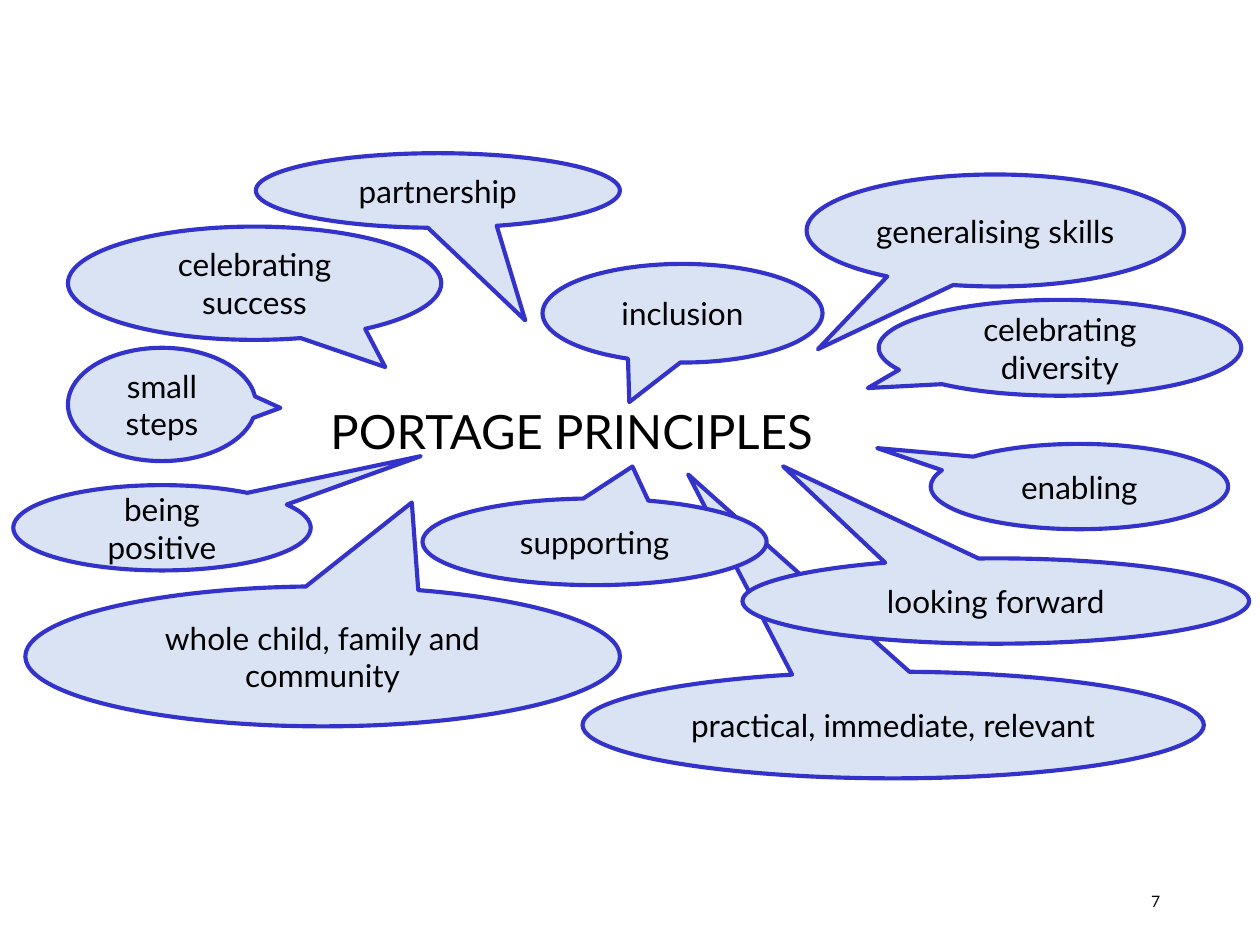
from dataclasses import dataclass

from pptx import Presentation
from pptx.dml.color import RGBColor
from pptx.enum.shapes import MSO_SHAPE
from pptx.enum.text import MSO_ANCHOR, PP_ALIGN
from pptx.slide import Slide
from pptx.text.text import TextFrame
from pptx.util import Pt

BLACK = RGBColor(0x00, 0x00, 0x00)
PALE_BLUE = RGBColor(0xDA, 0xE3, 0xF3)
BLUE = RGBColor(0x33, 0x33, 0xCC)
FONT = "Lato"


@dataclass(frozen=True)
class Callout:
    text: str
    left: float
    top: float
    width: float
    height: float
    tail_x: float
    tail_y: float


@dataclass(frozen=True)
class Label:
    text: str
    left: float
    top: float
    width: float
    height: float
    size: float
    align: PP_ALIGN
    anchor: MSO_ANCHOR


BACK_CALLOUT = Callout("practical, immediate, relevant", 314.6, 362.9, 335.5, 57.6, -0.33, -2.35)

CALLOUTS = [
    Callout("small steps", 36.7, 187.9, 101.5, 61.2, 0.63, 0.03),
    Callout("celebrating success", 36.7, 122.4, 201.6, 61.2, 0.35, 0.74),
    Callout("partnership", 138.2, 82.8, 196.6, 40.3, 0.24, 1.74),
    Callout("inclusion", 293, 142.6, 151.2, 53.3, -0.19, 0.9),
    Callout("generalising skills", 435.6, 94.3, 203.8, 60.5, -0.47, 1.06),
    Callout("celebrating diversity", 474.5, 162, 195.8, 51.8, -0.53, 0.42),
    Callout("enabling", 502.6, 239.8, 160.6, 46.1, -0.68, -0.45),
    Callout("supporting", 228.2, 269.3, 185.8, 46.8, 0.11, -0.87),
    Callout("whole child, family and community", 13.7, 316.8, 321.1, 75.6, 0.15, -1.1),
    Callout("being positive", 7.2, 262.1, 160.6, 46.1, 0.87, -0.84),
    Callout("looking forward", 401, 301.7, 273.6, 46.1, -0.42, -1.58),
]

TITLE = Label("PORTAGE PRINCIPLES", 171.4, 213.8, 342.7, 38.2, 25.5, PP_ALIGN.LEFT, MSO_ANCHOR.TOP)
PAGE_NUMBER = Label("7", 480.2, 473, 153.4, 27.4, 8.5, PP_ALIGN.RIGHT, MSO_ANCHOR.MIDDLE)


def write_text(tf: TextFrame, text: str, size: float, align: PP_ALIGN, anchor: MSO_ANCHOR) -> None:
    tf.text = text
    tf.word_wrap = True
    tf.vertical_anchor = anchor
    p = tf.paragraphs[0]
    p.alignment = align
    r = p.runs[0]
    r.font.name = FONT
    r.font.size = Pt(size)
    r.font.color.rgb = BLACK


def draw_callout(s: Slide, callout: Callout) -> None:
    sp = s.shapes.add_shape(
        MSO_SHAPE.OVAL_CALLOUT,
        Pt(callout.left), Pt(callout.top), Pt(callout.width), Pt(callout.height),
    )
    sp.adjustments[0] = callout.tail_x
    sp.adjustments[1] = callout.tail_y
    sp.shadow.inherit = False
    sp.fill.solid()
    sp.fill.fore_color.rgb = PALE_BLUE
    sp.line.color.rgb = BLUE
    sp.line.width = Pt(2.25)
    write_text(sp.text_frame, callout.text, 17, PP_ALIGN.CENTER, MSO_ANCHOR.MIDDLE)


def draw_label(s: Slide, label: Label) -> None:
    sp = s.shapes.add_textbox(
        Pt(label.left), Pt(label.top), Pt(label.width), Pt(label.height)
    )
    write_text(sp.text_frame, label.text, label.size, label.align, label.anchor)


def main() -> None:
    prs = Presentation()
    prs.slide_width = Pt(680.4)
    prs.slide_height = Pt(510.5)
    s = prs.slides.add_slide(prs.slide_layouts[6])
    draw_callout(s, BACK_CALLOUT)
    draw_label(s, TITLE)
    for callout in CALLOUTS:
        draw_callout(s, callout)
    draw_label(s, PAGE_NUMBER)
    prs.save("out.pptx")


if __name__ == "__main__":
    main()
